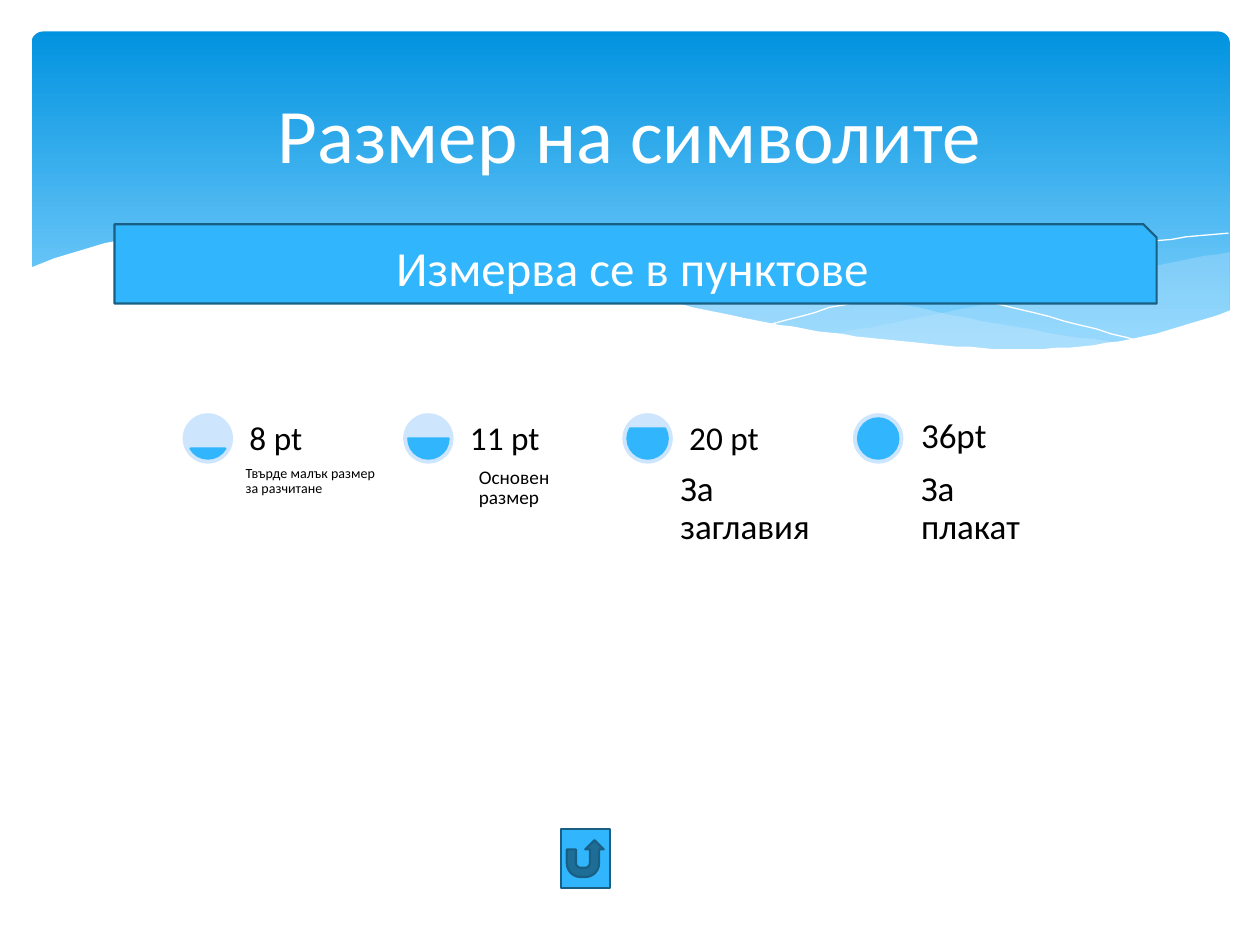
from lxml import etree
from pptx import Presentation
from pptx.dml.color import RGBColor
from pptx.enum.shapes import MSO_SHAPE
from pptx.enum.text import MSO_ANCHOR, PP_ALIGN
from pptx.oxml.ns import qn
from pptx.util import Pt

PX = 9144  # 100 px to the inch
FONT = "Calibri"
WHITE = RGBColor(0xFF, 0xFF, 0xFF)
BLACK = RGBColor(0x00, 0x00, 0x00)
BLUE = RGBColor(0x31, 0xB6, 0xFD)
DARK_BLUE = RGBColor(0x19, 0x5F, 0x84)
PALE_BLUE = RGBColor(0xCE, 0xE5, 0xFE)
WAVE_BLUE = RGBColor(0xC6, 0xE7, 0xFC)
SKY_TOP = RGBColor(0x02, 0x93, 0xE0)
SKY_BOTTOM = RGBColor(0x83, 0xD3, 0xFE)
CENTER = PP_ALIGN.CENTER
LEFT = PP_ALIGN.LEFT
TOP = MSO_ANCHOR.TOP
MIDDLE = MSO_ANCHOR.MIDDLE
BOTTOM = MSO_ANCHOR.BOTTOM


def add_box(kind, left, top, width, height, fill, line=None):
    """Add a preset shape; without a line colour it has no outline."""
    shape = slide.shapes.add_shape(kind, left * PX, top * PX, width * PX, height * PX)
    shape.shadow.inherit = False
    shape.fill.solid()
    shape.fill.fore_color.rgb = fill
    if line is None:
        shape.line.fill.background()
    else:
        shape.line.color.rgb = line
        shape.line.width = Pt(1.25)
    return shape


def write_text(shape, text, size, color, alignment, anchor, inset=None, spacing=None):
    frame = shape.text_frame
    frame.word_wrap = True
    frame.vertical_anchor = anchor
    if inset is not None:
        frame.margin_left = frame.margin_right = inset * PX
        frame.margin_top = frame.margin_bottom = inset * PX
    paragraph = frame.paragraphs[0]
    paragraph.alignment = alignment
    if spacing is not None:
        paragraph.line_spacing = spacing
    run = paragraph.add_run()
    run.text = text
    run.font.size = Pt(size)
    run.font.name = FONT
    run.font.color.rgb = color


presentation = Presentation()
presentation.slide_width = 1000 * PX
presentation.slide_height = 750 * PX
slide = presentation.slides.add_slide(presentation.slide_layouts[5])
slide.background.fill.solid()
slide.background.fill.fore_color.rgb = WHITE

# Gradient header
header = add_box(MSO_SHAPE.ROUNDED_RECTANGLE, 25, 25, 951, 270, SKY_TOP)
header.adjustments[0] = 0.034
header.fill.gradient()
header.fill.gradient_angle = 270
for stop, (position, color) in zip(header.fill.gradient_stops, [(0, SKY_TOP), (0.9, SKY_BOTTOM)]):
    stop.position = position
    stop.color.rgb = color

# Waves in the header. An edge is a smooth curve through heights that stand
# at equal steps from left to right; two edges enclose an area, one is a line.
STEPS = 8  # straight pieces between two neighbouring heights
right_wave = [(265, 250, 233, 215, 200), (265, 275, 278, 271, 247)]
middle_wave = [(191, 185, 194, 212, 236, 257, 273), (191, 208, 231, 253, 270, 278, 273)]
falling_line = [(195, 187, 192, 204, 222, 245, 272)]
rising_line = [(257, 233, 213, 196, 185)]
page_area = [
    (213, 189, 184, 187, 197, 214, 232, 250, 264, 273, 277, 269, 246),
    (329, 329, 329),
]
for left, right, edges, fill, opacity in [
    (661, 976, right_wave, WAVE_BLUE, 29),
    (286, 893, middle_wave, WAVE_BLUE, 40),
    (309, 907, falling_line, None, 100),
    (613, 975, rising_line, None, 100),
    (23, 977, page_area, WHITE, 100),
]:
    outline = []
    for heights in edges:
        # Catmull-Rom spline, with one more height beyond each end
        before = 3 * heights[0] - 3 * heights[1] + heights[2]
        after = 3 * heights[-1] - 3 * heights[-2] + heights[-3]
        knots = [before, *heights, after]
        spans = len(heights) - 1
        curve = []
        for step in range(spans * STEPS + 1):
            span = min(step // STEPS, spans - 1)
            t = step / STEPS - span
            a, b, c, d = knots[span:span + 4]
            y = b + t / 2 * (c - a + t * (2 * a - 5 * b + 4 * c - d + t * (3 * b - 3 * c + d - a)))
            x = left + (right - left) * step / (spans * STEPS)
            curve.append((x, y))
        # The lower edge runs back from right to left
        outline += curve[::-1] if outline else curve

    builder = slide.shapes.build_freeform(*outline[0], scale=PX)
    builder.add_line_segments(outline[1:], close=len(edges) == 2)
    wave = builder.convert_to_shape()
    wave.shadow.inherit = False
    if fill is None:
        wave.fill.background()
        wave.line.color.rgb = WHITE
        wave.line.width = Pt(0)
        continue
    wave.line.fill.background()
    wave.fill.solid()
    wave.fill.fore_color.rgb = fill
    if opacity < 100:
        color_element = wave.fill._xPr.find(qn("a:solidFill"))[0]
        etree.SubElement(color_element, qn("a:alpha"), val=str(opacity * 1000))

# Font sizes: each has a circle filled up to a level, a heading beside it
# and a note below, centred under the heading's box
CIRCLE = 40
RIM = 4
ROW_TOP = 328
HEADING_WIDTH = 118
NOTE_HEIGHT = 168
INSET_SHARE = 0.28  # text inset in px for each point of font size
for circle_left, level_angle, heading, heading_size, note, note_size, note_width in [
    (145, 30, "8 pt", 19, "Твърде малък размер за разчитане", 8, 118),
    (320, 0, "11 pt", 19, "Основен размер", 11, 99),
    (494, -30, "20 pt", 19, "За заглавия", 20, 134),
    (677, -90, "36pt", 20, "За плакат", 20, 118),
]:
    add_box(MSO_SHAPE.OVAL, circle_left, ROW_TOP, CIRCLE, CIRCLE, PALE_BLUE)
    inner = CIRCLE - 2 * RIM
    level = add_box(MSO_SHAPE.CHORD, circle_left + RIM, ROW_TOP + RIM, inner, inner, BLUE, BLUE)
    # Angles run clockwise from the right; a degree is 60000 units, scaled by 100000
    level.adjustments[0] = level_angle % 360 * 0.6
    level.adjustments[1] = (180 - level_angle) * 0.6

    heading_left = circle_left + CIRCLE + 2 * RIM
    note_left = heading_left + (HEADING_WIDTH - note_width) // 2
    for text, size, left, top, width, height, anchor in [
        (note, note_size, note_left, ROW_TOP + CIRCLE, note_width, NOTE_HEIGHT, TOP),
        (heading, heading_size, heading_left, ROW_TOP, HEADING_WIDTH, CIRCLE, BOTTOM),
    ]:
        box = slide.shapes.add_textbox(left * PX, top * PX, width * PX, height * PX)
        write_text(box, text, size, BLACK, LEFT, anchor, round(size * INSET_SHARE), 0.9)

# Title, in front of the header
title = slide.shapes.title
title.left, title.top, title.width, title.height = 50 * PX, 37 * PX, 900 * PX, 137 * PX
write_text(title, "Размер на символите", 44, WHITE, CENTER, MIDDLE)
title.element.getparent().append(title.element)

banner = add_box(MSO_SHAPE.SNIP_1_RECTANGLE, 91, 178, 827, 63, BLUE, DARK_BLUE)
write_text(banner, "Измерва се в пунктове", 28, WHITE, CENTER, MIDDLE)
add_box(MSO_SHAPE.ACTION_BUTTON_RETURN, 445, 658, 39, 47, BLUE, DARK_BLUE)

presentation.save("out.pptx")
